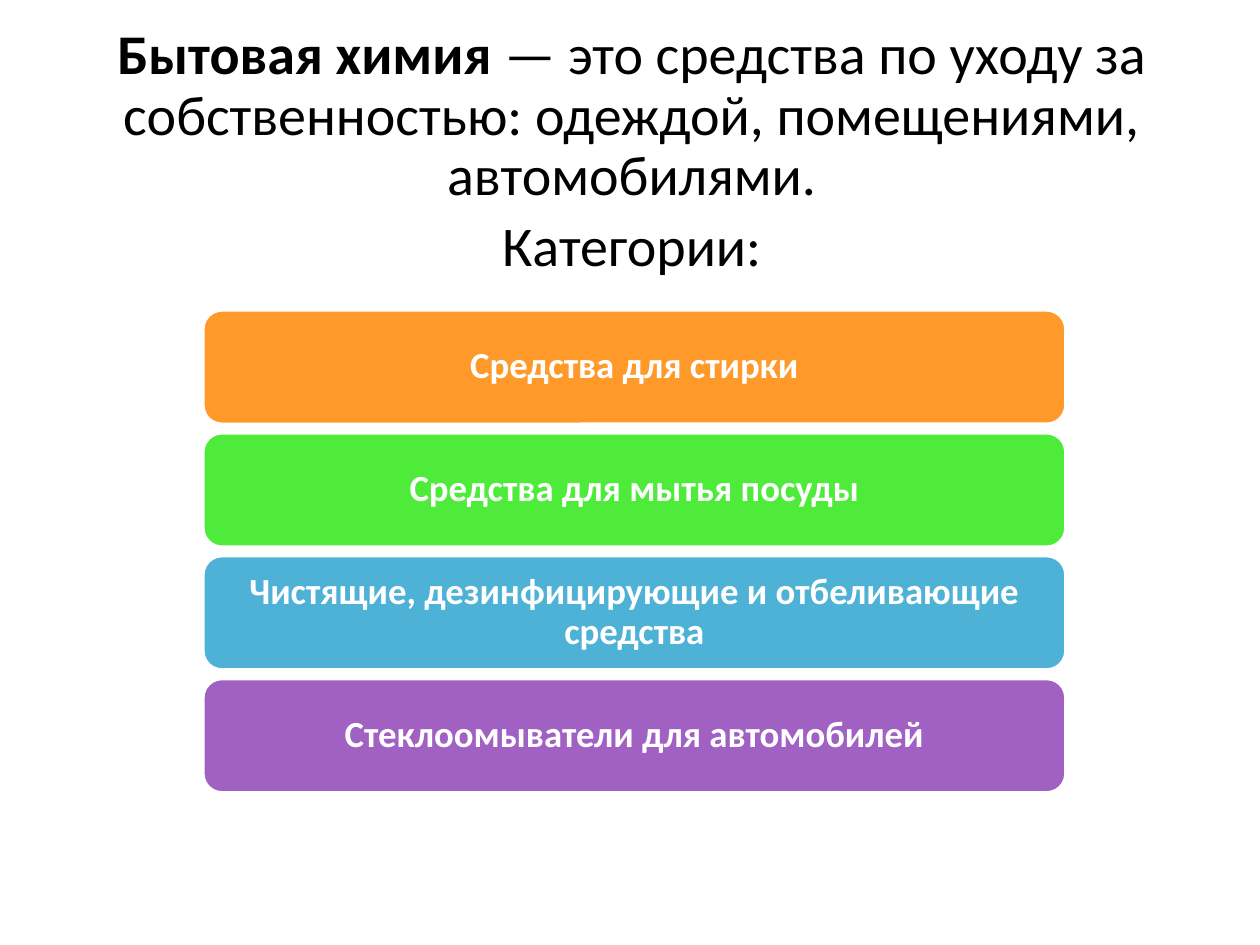
import dataclasses
import typing

import pptx
import pptx.dml.color
import pptx.enum.shapes
import pptx.enum.text
import pptx.util

SLIDE_WIDTH = pptx.util.Inches(10)
SLIDE_HEIGHT = pptx.util.Inches(7.5)
TYPEFACE = "Calibri"
FIRST_ROW_TOP = 32.8
ROW_PITCH = 13


@dataclasses.dataclass(frozen=True)
class Area:
    left: float
    top: float
    width: float
    height: float

    def lengths(self) -> tuple[int, int, int, int]:
        return (
            across(self.left),
            down(self.top),
            across(self.width),
            down(self.height),
        )


@dataclasses.dataclass(frozen=True)
class Category:
    label: str
    fill: str


CATEGORIES = (
    Category("Средства для стирки", "FF9929"),
    Category("Средства для мытья посуды", "4EEB3B"),
    Category("Чистящие, дезинфицирующие и отбеливающие средства", "4EB2D7"),
    Category("Стеклоомыватели для автомобилей", "A061C3"),
)

DEFINITION = (
    (
        ("Бытовая химия", True),
        (" — это средства по уходу за собственностью: одеждой, помещениями, автомобилями.", False),
    ),
    (("Категории:", False),),
)


def across(percent: float) -> int:
    return round(SLIDE_WIDTH * percent / 100)


def down(percent: float) -> int:
    return round(SLIDE_HEIGHT * percent / 100)


def color(value: str) -> pptx.dml.color.RGBColor:
    return pptx.dml.color.RGBColor.from_string(value)


def apply(target: typing.Any, values: dict[str, typing.Any]) -> None:
    for attribute, value in values.items():
        setattr(target, attribute, value)


def format_frame(frame: typing.Any, inset: float, anchor: typing.Any) -> None:
    margin = pptx.util.Inches(inset)
    sides = ("left", "top", "right", "bottom")
    apply(frame, {f"margin_{side}": margin for side in sides})
    apply(frame, {"word_wrap": True, "vertical_anchor": anchor})


def add_words(paragraph: typing.Any, words: str, size: float, ink: str, bold: bool) -> None:
    apply(paragraph, {"alignment": pptx.enum.text.PP_ALIGN.CENTER, "line_spacing": 0.9})
    run = paragraph.add_run()
    run.text = words
    apply(run.font, {"name": TYPEFACE, "size": pptx.util.Pt(size), "bold": bold})
    run.font.color.rgb = color(ink)


def draw_definition(slide: typing.Any, area: Area) -> None:
    frame = slide.shapes.add_textbox(*area.lengths()).text_frame
    format_frame(frame, 0, pptx.enum.text.MSO_ANCHOR.TOP)
    for index, pieces in enumerate(DEFINITION):
        paragraph = frame.add_paragraph() if index else frame.paragraphs[0]
        if index:
            paragraph.space_before = pptx.util.Pt(6)
        for words, bold in pieces:
            add_words(paragraph, words, 32, "000000", bold)


def draw_category(slide: typing.Any, category: Category, area: Area) -> None:
    bar = slide.shapes.add_shape(
        pptx.enum.shapes.MSO_SHAPE.ROUNDED_RECTANGLE, *area.lengths()
    )
    bar.shadow.inherit = False
    bar.fill.solid()
    bar.fill.fore_color.rgb = color(category.fill)
    bar.line.color.rgb = color("FFFFFF")
    bar.line.width = pptx.util.Pt(2)
    format_frame(bar.text_frame, 0.05, pptx.enum.text.MSO_ANCHOR.MIDDLE)
    add_words(bar.text_frame.paragraphs[0], category.label, 21, "FFFFFF", True)


def main() -> None:
    presentation = pptx.Presentation()
    apply(presentation, {"slide_width": SLIDE_WIDTH, "slide_height": SLIDE_HEIGHT})
    slide = presentation.slides.add_slide(presentation.slide_layouts[6])
    draw_definition(slide, Area(4.3, 2.8, 91.7, 27.3))
    for row, category in enumerate(CATEGORIES):
        top = FIRST_ROW_TOP + row * ROW_PITCH
        draw_category(slide, category, Area(16.1, top, 68.5, 12.1))
    presentation.save("out.pptx")


if __name__ == "__main__":
    main()
